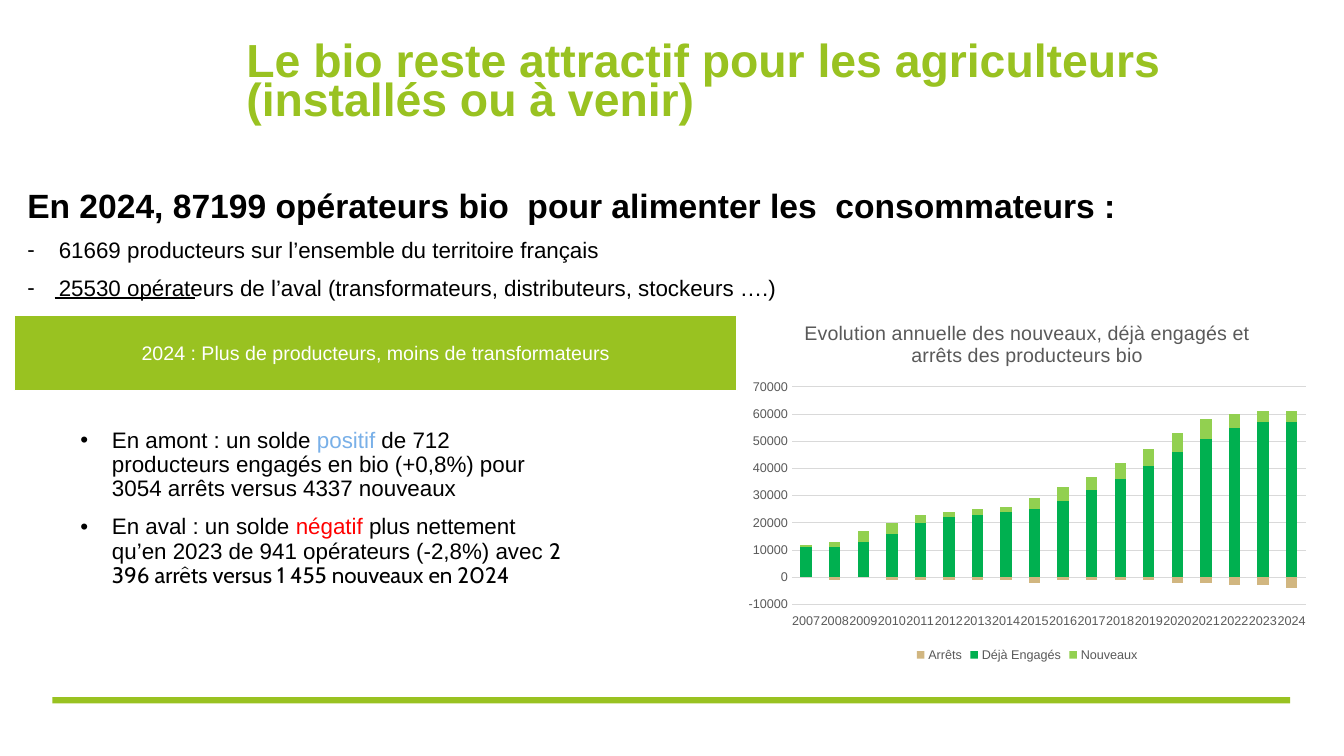
from dataclasses import dataclass
from lxml import etree
from pptx import Presentation
from pptx.chart.data import CategoryChartData as ChartData
from pptx.dml.color import RGBColor as RGB
from pptx.enum.chart import XL_CHART_TYPE as Kind, XL_LEGEND_POSITION as Legend
from pptx.enum.chart import XL_TICK_LABEL_POSITION as Label, XL_TICK_MARK as Tick
from pptx.enum.shapes import MSO_CONNECTOR as Link, MSO_SHAPE as Form
from pptx.enum.text import MSO_ANCHOR as Anchor, MSO_AUTO_SIZE as Fit, PP_ALIGN as Align
from pptx.oxml.ns import qn
from pptx.util import Pt

HUES = {
    "lime": "99C221", "black": "000000", "white": "FFFFFF", "blue": "79B0E8",
    "red": "FF0000", "tan": "D1B680", "green": "00B050", "light": "92D050",
    "gray": "595959", "grid": "D9D9D9",
}
FACE = "Arial"


@dataclass
class Span:
    text: str
    hue: str = ""
    face: str = ""


@dataclass
class Para:
    spans: list[Span]
    size: float = 16
    mark: str = ""
    bold: bool = False


@dataclass
class Series:
    name: str
    hue: str
    vals: list[int]  # thousands of producers


def tint(name: str) -> RGB:
    return RGB.from_string(HUES[name])


def style(font, size: float, hue: str, bold: bool = False) -> None:
    font.name, font.size, font.bold = FACE, Pt(size), bold
    font.color.rgb = tint(hue)


def strip(frame) -> None:
    frame.margin_left = frame.margin_right = 0
    frame.margin_top = frame.margin_bottom = 0
    frame.word_wrap, frame.auto_size = True, Fit.NONE


def place(shape, left: float, top: float, width: float, height: float) -> None:
    shape.left, shape.top = Pt(left), Pt(top)
    shape.width, shape.height = Pt(width), Pt(height)


def add_rect(left: float, top: float, width: float, height: float):
    rect = slide.shapes.add_shape(Form.RECTANGLE, Pt(left), Pt(top), Pt(width), Pt(height))
    rect.shadow.inherit = False
    rect.fill.solid()
    rect.fill.fore_color.rgb = tint("lime")
    rect.line.fill.background()
    return rect


def add_text(left: float, top: float, width: float, height: float, paras: list[Para]) -> None:
    frame = slide.shapes.add_textbox(Pt(left), Pt(top), Pt(width), Pt(height)).text_frame
    strip(frame)
    for i, item in enumerate(paras):
        para = frame.add_paragraph() if i else frame.paragraphs[0]
        para.line_spacing = 0.9
        if i:
            para.space_before = Pt(10)
        if item.mark:
            props = para._p.get_or_add_pPr()
            props.set("marL", str(Pt(22.5)))
            props.set("indent", str(-Pt(22.5)))
            etree.SubElement(props, qn("a:buFont")).set("typeface", FACE)
            etree.SubElement(props, qn("a:buChar")).set("char", item.mark)
        style(para.font, item.size, "black", item.bold)
        for span in item.spans:
            run = para.add_run()
            run.text = span.text
            if span.hue:
                run.font.color.rgb = tint(span.hue)
            if span.face:
                run.font.name = span.face


deck = Presentation()
deck.slide_width, deck.slide_height = Pt(960), Pt(540)
slide = deck.slides.add_slide(deck.slide_layouts[5])

# Footer bar and short rule
add_rect(37.5, 498, 884, 4.5)
rule = slide.shapes.add_connector(Link.STRAIGHT, Pt(39), Pt(213), Pt(139), Pt(213))
rule.line.color.rgb = tint("black")
rule.line.width = Pt(1)
etree.SubElement(rule._element.spPr, qn("a:effectLst"))

# Title
title = slide.shapes.title
place(title, 176, 30, 773, 58.5)
strip(title.text_frame)
title.text_frame.vertical_anchor = Anchor.BOTTOM
title.text_frame.text = "Le bio reste attractif pour les agriculteurs (installés ou à venir)"
head = title.text_frame.paragraphs[0]
head.alignment, head.line_spacing = Align.LEFT, 0.7
style(head.font, 33.1, "lime", True)

# Key figures
add_text(19.5, 135, 930, 80, [
    Para([Span("En 2024, 87199 opérateurs bio  pour alimenter les  consommateurs :")], 24, bold=True),
    Para([Span("61669 producteurs sur l’ensemble du territoire français")], mark="-"),
    Para([Span("25530 opérateurs de l’aval (transformateurs, distributeurs, stockeurs ….)")], mark="-"),
])

# Banner
banner = add_rect(10.5, 225, 516, 54)
banner.line.color.rgb = tint("white")
banner.line.width = Pt(1)
banner.text_frame.vertical_anchor = Anchor.MIDDLE
banner.text_frame.text = "2024 : Plus de producteurs, moins de transformateurs"
label = banner.text_frame.paragraphs[0]
label.alignment = Align.CENTER
style(label.font, 14, "white")

# Yearly chart
SERIES = [
    Series("Arrêts", "tan", [0, -1, 0, -1, -1, -1, -1, -1, -2, -1, -1, -1, -1, -2, -2, -3, -3, -4]),
    Series("Déjà Engagés", "green",
           [11, 11, 13, 16, 20, 22, 23, 24, 25, 28, 32, 36, 41, 46, 51, 55, 57, 57]),
    Series("Nouveaux", "light", [1, 2, 4, 4, 3, 2, 2, 2, 4, 5, 5, 6, 6, 7, 7, 5, 4, 4]),
]
data = ChartData(number_format="General")
data.categories = [str(year) for year in range(2007, 2025)]
for item in SERIES:
    data.add_series(item.name, [val * 1000 for val in item.vals])
chart = slide.shapes.add_chart(
    Kind.COLUMN_STACKED, Pt(526.5), Pt(217), Pt(414.5), Pt(259), data).chart
style(chart.font, 10, "black")
chart.has_title = True
chart.chart_title.include_in_layout = False
name = chart.chart_title.text_frame
name.text = "Evolution annuelle des nouveaux, déjà engagés et arrêts des producteurs bio"
style(name.paragraphs[0].font, 14, "gray")

plot = chart.plots[0]
plot.gap_width, plot.overlap, plot.vary_by_categories = 150, 100, False
for bars, item in zip(plot.series, SERIES):
    bars.invert_if_negative = False
    bars.format.fill.solid()
    bars.format.fill.fore_color.rgb = tint(item.hue)

years, count = chart.category_axis, chart.value_axis
for axis in (years, count):
    axis.major_tick_mark = axis.minor_tick_mark = Tick.NONE
    style(axis.tick_labels.font, 9, "gray")
years.tick_label_position = Label.LOW
count.minimum_scale, count.maximum_scale, count.major_unit = -10000, 70000, 10000
count.has_major_gridlines = True
count.format.line.fill.background()
for line in (years.format.line, count.major_gridlines.format.line):
    line.color.rgb = tint("grid")
    line.width = Pt(0.75)

chart.has_legend = True
chart.legend.position = Legend.BOTTOM
chart.legend.include_in_layout = False
style(chart.legend.font, 9, "gray")

# Upstream and downstream balance
add_text(57.5, 306.5, 350.5, 162, [
    Para([Span("En amont : un solde "), Span("positif ", "blue"),
          Span("de 712 producteurs engagés en bio (+0,8%) pour 3054 arrêts versus 4337 nouveaux")],
         mark="•"),
    Para([Span("En aval : un solde "), Span("négatif", "red"),
          Span(" plus nettement qu’en 2023 de 941 opérateurs (-2,8%) avec "),
          Span("2 396 arrêts versus 1 455 nouveaux en 2024", face="Cabin")], mark="•"),
])

deck.save("out.pptx")
